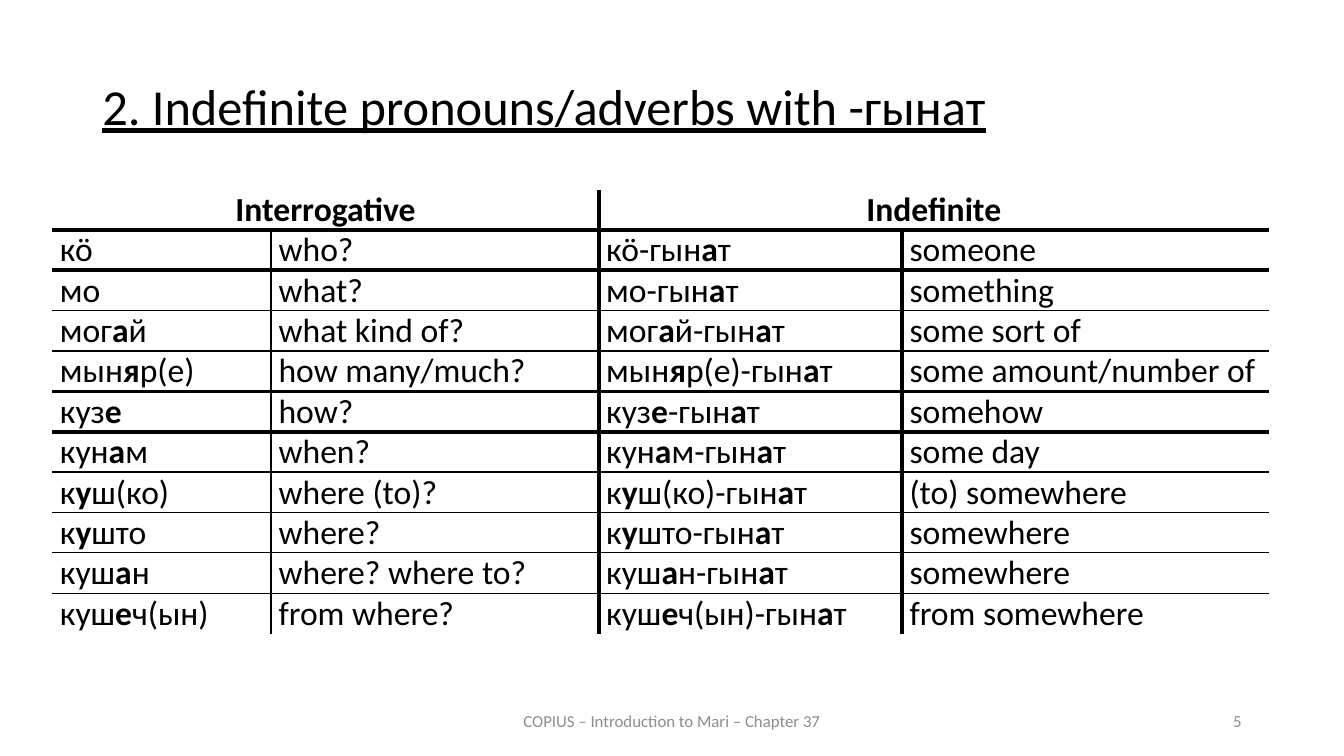
import pptx
import pptx.dml.color
import pptx.enum.text
import pptx.oxml
import pptx.oxml.ns
import pptx.util
from dataclasses import dataclass

Pt = pptx.util.Pt
Align = pptx.enum.text.PP_ALIGN
Anchor = pptx.enum.text.MSO_ANCHOR


@dataclass(frozen=True)
class Theme:
    font: str = "Calibri"
    ink: str = "000000"
    muted: str = "8C8C8C"
    title_size: int = 36
    table_size: int = 24
    footer_size: int = 12
    thin: int = 1
    thick: int = 3


TITLE = "2. Indefinite pronouns/adverbs with -гынат"
FOOTER = "COPIUS – Introduction to Mari – Chapter 37"
PAGE_NUMBER = "5"
HEADINGS = ("Interrogative", "Indefinite")
SUFFIX = "-гын*а*т"
PRONOUNS = [
    ("кӧ", "who?", "someone"),
    ("мо", "what?", "something"),
    ("мог*а*й", "what kind of?", "some sort of"),
    ("мын*я*р(е)", "how many/much?", "some amount/number of"),
    ("куз*е*", "how?", "somehow"),
    ("кун*а*м", "when?", "some day"),
    ("к*у*ш(ко)", "where (to)?", "(to) somewhere"),
    ("к*у*што", "where?", "somewhere"),
    ("куш*а*н", "where? where to?", "somewhere"),
    ("куш*е*ч(ын)", "from where?", "from somewhere"),
]
COLUMN_WIDTHS = (156.2, 234, 216.7, 262.1)
ROW_HEIGHT = 28.8
THICK_ABOVE = {1, 5}
THICK_BELOW = {0, 1, 4, 5}
THICK_LEFT = {2}
THICK_RIGHT = {1, 2}


def write_text(frame, text, *, font, size, color, align=Align.LEFT,
               bold=False, underline=False, line_spacing=None, before=None):
    para = frame.paragraphs[0]
    para.alignment = align
    para.line_spacing = line_spacing
    if before is not None:
        para.space_before = Pt(before)
    for index, piece in enumerate(text.split("*")):
        if not piece:
            continue
        span = para.add_run()
        span.text = piece
        span.font.name = font
        span.font.size = Pt(size)
        span.font.bold = bold or index % 2 == 1
        span.font.underline = underline
        span.font.color.rgb = pptx.dml.color.RGBColor.from_string(color)


class Builder:
    def __init__(self, page, theme):
        self.page = page
        self.theme = theme

    def text_box(self, text, left, top, width, height, anchor=Anchor.TOP, **style):
        box = self.page.shapes.add_textbox(Pt(left), Pt(top), Pt(width), Pt(height))
        box.text_frame.word_wrap = True
        box.text_frame.vertical_anchor = anchor
        write_text(box.text_frame, text, font=self.theme.font, **style)

    def table(self, left, top, widths, row_count, row_height):
        frame = self.page.shapes.add_table(
            row_count, len(widths), Pt(left), Pt(top),
            Pt(sum(widths)), Pt(row_count * row_height))
        table = frame.table
        table.first_row = False
        table.horz_banding = False
        for column, width in zip(table.columns, widths):
            column.width = Pt(width)
        for row in table.rows:
            row.height = Pt(row_height)
        return table

    def cell(self, cell, text, borders, anchor=Anchor.MIDDLE, **style):
        cell.margin_left = cell.margin_right = Pt(5.4)
        cell.margin_top = cell.margin_bottom = Pt(0)
        cell.vertical_anchor = anchor
        write_text(cell.text_frame, text, font=self.theme.font,
                   size=self.theme.table_size, color=self.theme.ink, **style)
        properties = cell._tc.get_or_add_tcPr()
        for side, width in zip("LRTB", borders):
            properties.append(self.border(side, width))
        cell.fill.background()

    def border(self, side, width):
        namespace = pptx.oxml.ns.nsdecls("a")
        fill = "<a:noFill/>"
        if width:
            fill = f'<a:solidFill><a:srgbClr val="{self.theme.ink}"/></a:solidFill>'
        return pptx.oxml.parse_xml(
            f'<a:ln{side} {namespace} w="{Pt(width)}">{fill}</a:ln{side}>')

    def borders(self, row, column, last_row, last_column):
        def weight(present, thick):
            if not present:
                return 0
            return self.theme.thick if thick else self.theme.thin

        header = row == 0
        middle = column == 2
        return (
            weight(middle if header else column > 0, column in THICK_LEFT),
            weight(column == 1 if header else column < last_column,
                   column in THICK_RIGHT),
            weight(not header, row in THICK_ABOVE),
            weight(row < last_row, row in THICK_BELOW),
        )


def build_pronoun_table(builder):
    rows = [(HEADINGS[0], "", HEADINGS[1], "")]
    rows += [(stem, question, stem + SUFFIX, meaning)
             for stem, question, meaning in PRONOUNS]
    table = builder.table(37.44, 135.4, COLUMN_WIDTHS, len(rows), ROW_HEIGHT)
    for column in (0, 2):
        table.cell(0, column).merge(table.cell(0, column + 1))
    for row, texts in enumerate(rows):
        style = {}
        if row == 0:
            style = {"anchor": Anchor.TOP, "align": Align.CENTER, "bold": True}
        for column, text in enumerate(texts):
            borders = builder.borders(row, column, len(rows) - 1, len(texts) - 1)
            builder.cell(table.cell(row, column), text, borders, **style)


def main():
    deck = pptx.Presentation()
    deck.slide_width = Pt(960)
    deck.slide_height = Pt(540)
    theme = Theme()
    builder = Builder(deck.slides.add_slide(deck.slide_layouts[6]), theme)
    builder.text_box(TITLE, 66, 54.7, 828, 59.8, size=theme.title_size,
                     color=theme.ink, underline=True, align=Align.JUSTIFY,
                     line_spacing=0.9, before=12)
    footer = {"anchor": Anchor.MIDDLE, "size": theme.footer_size, "color": theme.muted}
    builder.text_box(FOOTER, 318, 500.5, 324, 28.8, align=Align.CENTER, **footer)
    builder.text_box(PAGE_NUMBER, 678, 500.5, 216, 28.8, align=Align.RIGHT, **footer)
    build_pronoun_table(builder)
    deck.save("out.pptx")


if __name__ == "__main__":
    main()
